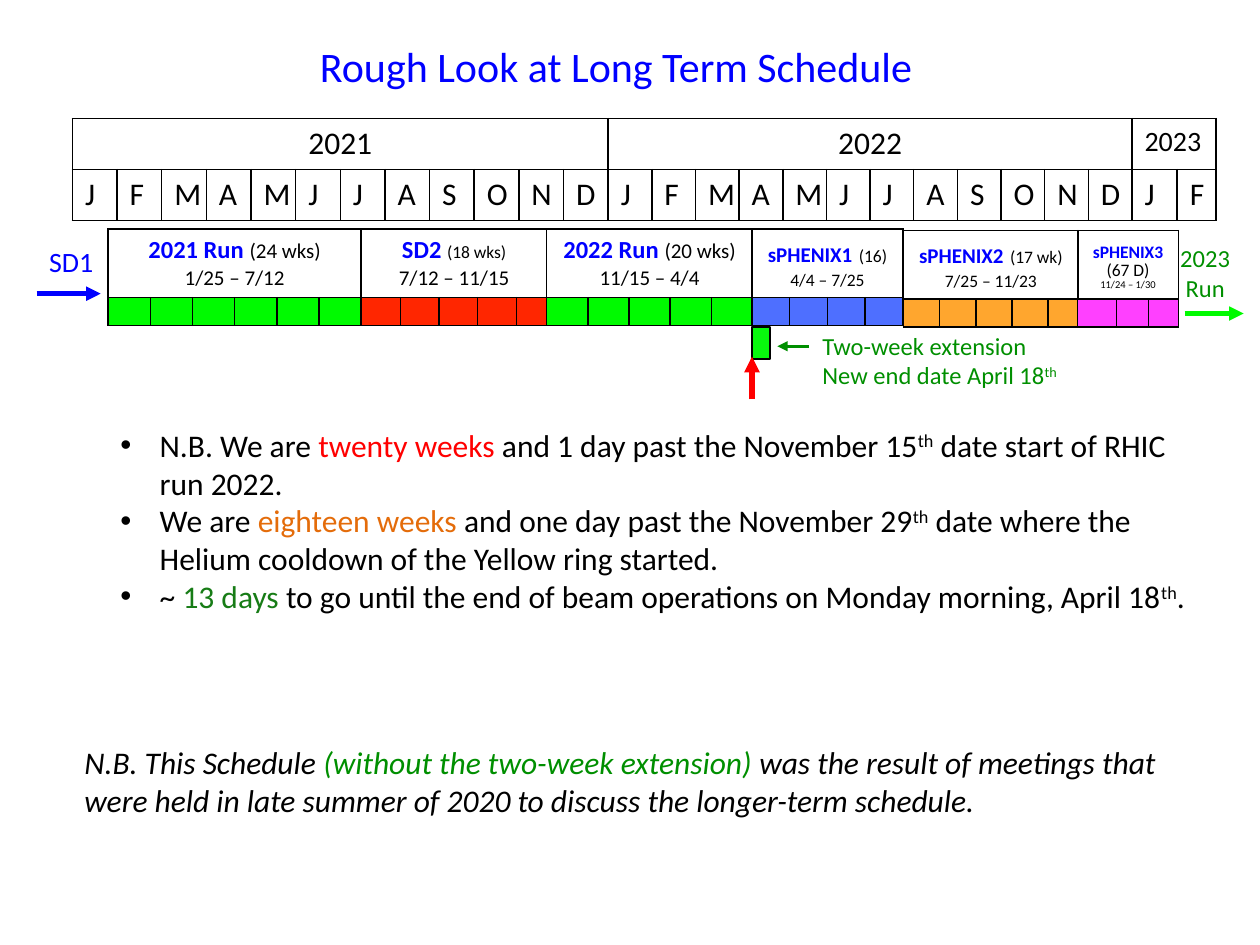
from lxml.etree import SubElement
from pptx import Presentation
from pptx.dml.color import RGBColor
from pptx.enum.shapes import MSO_CONNECTOR, MSO_SHAPE
from pptx.enum.text import PP_ALIGN
from pptx.oxml import parse_xml
from pptx.oxml.ns import nsdecls, qn
from pptx.util import Cm, Pt

COLORS = {
    "black": "000000", "blue": "0000FF", "red": "FF0000", "orange": "E46C0A",
    "green": "008F00", "dark green": "177C16", "run": "00FA00",
    "shutdown": "FF2600", "sphenix1": "0432FF", "sphenix2": "FF9300",
    "sphenix3": "FF40FF", "extension": "08F90D",
}


def write_text(text_frame, paragraphs, paragraph_format=None, **defaults):
    """Fill a frame from lists of (text, run format) pairs, one list a paragraph."""
    for index, runs in enumerate(paragraphs):
        paragraph = text_frame.paragraphs[0] if index == 0 else text_frame.add_paragraph()
        for name, value in (paragraph_format or {}).items():
            setattr(paragraph, name, value)
        for text, run_format in runs:
            run = paragraph.add_run()
            run.text = text
            values = {"name": "Calibri", "color": "black", **defaults, **run_format}
            run.font.color.rgb = RGBColor.from_string(COLORS[values.pop("color")])
            if values.pop("superscript", False):
                run._r.get_or_add_rPr().set("baseline", "30000")
            for name, value in values.items():
                setattr(run.font, name, Pt(value) if name == "size" else value)


def add_ruled_table(left, top, column_widths, row_heights):
    """Add an unfilled table with thin black cell borders."""
    table = slide.shapes.add_table(
        len(row_heights), len(column_widths), Cm(left), Cm(top),
        Cm(sum(column_widths)), Cm(sum(row_heights))).table
    table.first_row = table.horz_banding = False
    for column, width in zip(table.columns, column_widths):
        column.width = Cm(width)
    for row, height in zip(table.rows, row_heights):
        row.height = Cm(height)
    for cell in table.iter_cells():
        cell.fill.background()
        for position, side in enumerate(("lnL", "lnR", "lnT", "lnB")):
            cell._tc.tcPr.insert(position, parse_xml(
                f'<a:{side} {nsdecls("a")} w="12700"><a:solidFill>'
                f'<a:srgbClr val="{COLORS["black"]}"/></a:solidFill></a:{side}>'))
    return table


presentation = Presentation()
presentation.slide_width, presentation.slide_height = Cm(25.4), Cm(19.05)
slide = presentation.slides.add_slide(presentation.slide_layouts[6])
centered = {"alignment": PP_ALIGN.CENTER}

# Calendar: a row of years above a row of months
calendar = add_ruled_table(1.46, 2.39, [0.9] * 12 + [0.88] * 12 + [0.91, 0.78], [1.03, 1.03])
for year, first, last, size, paragraph_format in (
        ("2021", 0, 11, 18, centered), ("2022", 12, 23, 18, centered), ("2023", 24, 25, 16, {})):
    calendar.cell(0, first).merge(calendar.cell(0, last))
    write_text(calendar.cell(0, first).text_frame, [[(year, {})]], paragraph_format, size=size)
for column, month in enumerate("JFMAMJJASOND" * 2 + "JF"):
    write_text(calendar.cell(1, column).text_frame, [[(month, {})]], size=18)

# Run periods: a heading above a coloured bar of months
heading = {"size": 14, "bold": True, "color": "blue"}
small_heading = {**heading, "size": 12}
tiny_heading = {**heading, "size": 10}
spacer = (" ", {"size": 16})
tight = {**centered, "line_spacing": 0.78}
periods = [
    # left, top, column widths, bar colour, opacity, paragraph format, paragraphs
    (2.18, 4.62, [0.85] * 6, "run", 100, centered,
     [[("2021 Run ", heading), ("(24 wks)", {})], [("1/25 – 7/12", {})]]),
    (11.02, 4.62, [0.83] * 5, "run", 100, centered,
     [[("2022 Run ", heading), ("(20 wks) 11/15 – 4/4", {})]]),
    (7.29, 4.62, [0.78] * 4 + [0.6], "shutdown", 100, centered,
     [[("SD2 ", heading), ("(18 wks)", {"size": 10})], [("7/12 – 11/15", {})]]),
    (15.16, 4.62, [0.76] * 4, "sphenix1", 70, centered,
     [[("sPHENIX1", small_heading), spacer, ("(16) 4/4 – 7/25", {"size": 10})]]),
    (18.21, 4.65, [0.73] * 4 + [0.58], "sphenix2", 82, centered,
     [[("sPHENIX2", small_heading), spacer, ("(17 wk)", {"size": 10})],
      [("7/25 – 11/23", {"size": 10})]]),
    (21.72, 4.65, [0.79, 0.64, 0.58], "sphenix3", 100, tight,
     [[("sPHENIX3", tiny_heading), spacer, ("(67 D)", {"size": 10})],
      [("11/24 – 1/30", {"size": 6})]]),
]
for left, top, widths, color, opacity, paragraph_format, paragraphs in periods:
    period = add_ruled_table(left, top, widths, [1.38, 0.56])
    title_cell = period.cell(0, 0)
    title_cell.merge(period.cell(0, len(widths) - 1))
    write_text(title_cell.text_frame, paragraphs, paragraph_format, size=12)
    for column in range(len(widths)):
        bar_cell = period.cell(1, column)
        bar_cell.margin_top = bar_cell.margin_bottom = 0
        # A small end mark keeps the empty row low
        SubElement(bar_cell.text_frame.paragraphs[0]._p, qn("a:endParaRPr"), sz="600")
        bar_cell.fill.solid()
        bar_cell.fill.fore_color.rgb = RGBColor.from_string(COLORS[color])
        if opacity < 100:
            fill_color = bar_cell._tc.tcPr.find(qn("a:solidFill"))[0]
            SubElement(fill_color, qn("a:alpha"), val=str(opacity * 1000))

# Two-week extension block
extension = slide.shapes.add_shape(MSO_SHAPE.RECTANGLE, Cm(15.16), Cm(6.6), Cm(0.36), Cm(0.64))
extension.shadow.inherit = False
extension.fill.solid()
extension.fill.fore_color.rgb = RGBColor.from_string(COLORS["extension"])
extension.line.color.rgb = RGBColor.from_string(COLORS["black"])
extension.line.width = Pt(1)

# Arrows: start, end, colour, line width
for start_x, start_y, end_x, end_y, color, width in (
        (0.74, 5.92, 2.03, 5.92, "blue", 2.75),
        (23.88, 6.32, 25.07, 6.32, "run", 2.75),
        (15.16, 8.05, 15.16, 7.19, "red", 3),
        (16.31, 6.98, 15.67, 6.98, "green", 1.5)):
    arrow = slide.shapes.add_connector(
        MSO_CONNECTOR.STRAIGHT, Cm(start_x), Cm(start_y), Cm(end_x), Cm(end_y))
    arrow.line.color.rgb = RGBColor.from_string(COLORS[color])
    arrow.line.width = Pt(width)
    SubElement(arrow.line._get_or_add_ln(), qn("a:tailEnd"), type="triangle")
    SubElement(arrow._element.spPr, qn("a:effectLst"))

# Texts: left, top, width, height, wrap, paragraph format, run defaults, paragraphs
raised = ("th", {"superscript": True})
notes = [
    [("N.B. We are ", {}), ("twenty weeks ", {"color": "red"}),
     ("and 1 day past the November 15", {}), raised, (" date start of RHIC run 2022.", {})],
    [("We are ", {}), ("eighteen weeks ", {"color": "orange"}),
     ("and one day past the November 29", {}), raised,
     (" date where the Helium cooldown of the Yellow ring started.", {})],
    [("~ ", {}), ("13 days ", {"color": "dark green"}),
     ("to go until the end of beam operations on Monday morning, April 18", {}), raised, (".", {})],
]
closing = [[
    ("N.B. This Schedule ", {}), ("(without the two-week extension)", {"color": "green"}),
    (" was the result of meetings that were held in late summer of 2020 "
     "to discuss the longer-term schedule.", {})]]
texts = [
    (0.74, 4.8, 1.42, 0.94, False, {}, {"size": 16, "color": "blue"}, [[("SD1", {})]]),
    (6.2, 0.69, 13.03, 1.27, True, {}, {"size": 24, "color": "blue"},
     [[("Rough Look at Long Term Schedule", {})]]),
    (23.37, 4.78, 1.85, 1.45, True, centered, {"size": 14, "color": "green"},
     [[("2023", {})], [("Run", {})]]),
    (16.33, 6.55, 7.37, 1.45, True, {}, {"size": 14, "color": "green"},
     [[("Two-week extension", {})], [("New end date April 18", {}), raised]]),
    (1.45, 14.86, 22.68, 1.8, True, {}, {"size": 18, "italic": True}, closing),
    (2.18, 8.46, 22.17, 4.11, True, {}, {"size": 18}, notes),
]
for left, top, width, height, wrap, paragraph_format, defaults, paragraphs in texts:
    text_box = slide.shapes.add_textbox(Cm(left), Cm(top), Cm(width), Cm(height))
    text_box.text_frame.word_wrap = wrap
    write_text(text_box.text_frame, paragraphs, paragraph_format, **defaults)
    if paragraphs is notes:
        for paragraph in text_box.text_frame.paragraphs:
            properties = paragraph._p.get_or_add_pPr()
            properties.set("marL", str(Cm(0.79)))
            properties.set("indent", str(Cm(-0.79)))
            SubElement(properties, qn("a:buFont"), typeface="Arial")
            SubElement(properties, qn("a:buChar"), char="•")

presentation.save("out.pptx")
